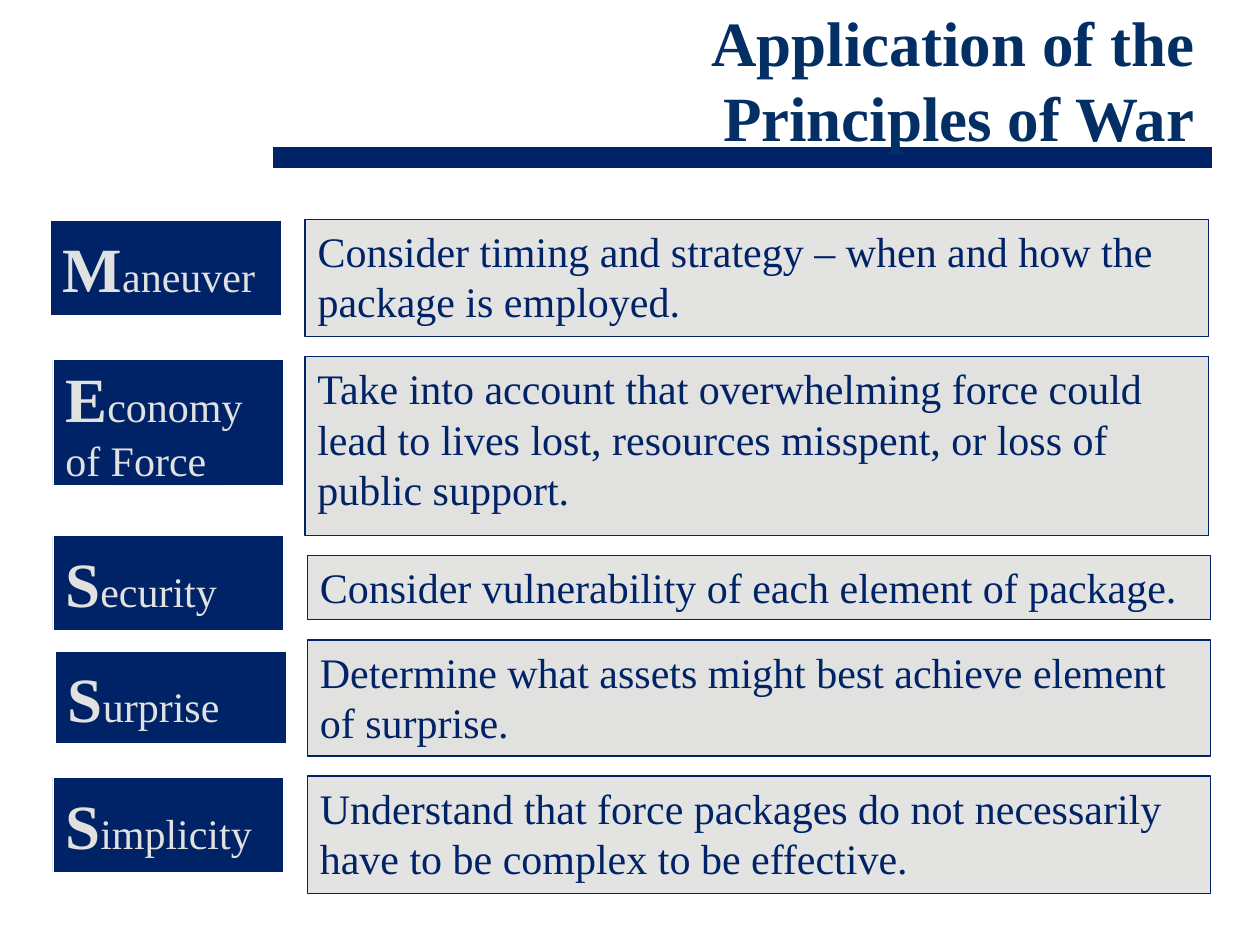
from lxml import etree
from pptx import Presentation
from pptx.dml.color import RGBColor
from pptx.enum import shapes, text
from pptx.oxml import ns
from pptx.util import Inches, Pt

NAVY = RGBColor(0x00, 0x23, 0x68)
TITLE_BLUE = RGBColor(0x03, 0x2F, 0x65)
LIGHT_GRAY = RGBColor(0xE1, 0xE1, 0xDF)
MID_GRAY = RGBColor(0xC8, 0xC8, 0xC6)
WHITE = RGBColor(0xFF, 0xFF, 0xFF)
FONT = "Times New Roman"

PRINCIPLES = [
    ("Maneuver", (0.4, 1.75, 0.75),
     "Consider timing and strategy – when and how the package is employed.",
     (2.42, 1.74, 0.93)),
    ("Economy of Force", (0.42, 2.85, 1),
     "Take into account that overwhelming force could lead to lives lost, "
     "resources misspent, or loss of public support.",
     (2.42, 2.83, 1.42)),
    ("Security", (0.42, 4.25, 0.75),
     "Consider vulnerability of each element of package.",
     (2.44, 4.41, 0.51)),
    ("Surprise", (0.44, 5.17, 0.73),
     "Determine what assets might best achieve element of surprise.",
     (2.44, 5.08, 0.92)),
    ("Simplicity", (0.42, 6.17, 0.75),
     "Understand that force packages do not necessarily have to be complex "
     "to be effective.",
     (2.44, 6.16, 0.93)),
]


def add_text(paragraph, content, size=24, color=NAVY, bold=False):
    run = paragraph.add_run()
    run.text = content
    run.font.name = FONT
    run.font.size = Pt(size)
    run.font.bold = bold
    run.font.color.rgb = color


class PrinciplesSlide:
    label_width = 1.83
    detail_width = 7.17

    def __init__(self, presentation):
        self.slide = presentation.slides.add_slide(presentation.slide_layouts[1])

    def place(self, shape, left, top, width, height):
        shape.left, shape.top = Inches(left), Inches(top)
        shape.width, shape.height = Inches(width), Inches(height)

    def prepare(self, shape, anchor, alignment):
        frame = shape.text_frame
        frame.word_wrap = True
        frame.auto_size = text.MSO_AUTO_SIZE.NONE
        frame.vertical_anchor = anchor
        paragraph = frame.paragraphs[0]
        paragraph.alignment = alignment
        paragraph.space_before = Pt(0)
        return paragraph

    def rule(self, left, right, top):
        line = self.slide.shapes.add_connector(
            shapes.MSO_CONNECTOR.STRAIGHT,
            Inches(left), Inches(top), Inches(right), Inches(top))
        line.line.color.rgb = NAVY
        line.line.width = Pt(12.25)
        properties = line._element.spPr
        etree.SubElement(properties, ns.qn("a:effectLst"))
        self.slide.shapes._spTree.insert(2, line._element)

    def title(self, content):
        title = self.slide.shapes.title
        self.place(title, 0.58, 0, 9, 1.25)
        paragraph = self.prepare(title, text.MSO_ANCHOR.MIDDLE, text.PP_ALIGN.RIGHT)
        add_text(paragraph, content[0], 36, TITLE_BLUE, True)
        paragraph.add_line_break()
        add_text(paragraph, content[1], 36, TITLE_BLUE, True)

    def box(self, shape, position, width, fill, line, line_width):
        left, top, height = position
        self.place(shape, left, top, width, height)
        shape.fill.solid()
        shape.fill.fore_color.rgb = fill
        shape.line.color.rgb = line
        shape.line.width = Pt(line_width)

    def rectangle(self):
        shape = self.slide.shapes.add_shape(
            shapes.MSO_SHAPE.RECTANGLE, 0, 0, Inches(1), Inches(1))
        shape.shadow.inherit = False
        return shape

    def label(self, name, position):
        shape = self.rectangle()
        self.box(shape, position, self.label_width, NAVY, WHITE, 0.25)
        paragraph = self.prepare(shape, text.MSO_ANCHOR.MIDDLE, text.PP_ALIGN.LEFT)
        add_text(paragraph, name[0], 36, LIGHT_GRAY, True)
        add_text(paragraph, name[1:], 24, LIGHT_GRAY)

    def detail(self, content, position, translucent, placeholder=None):
        shape = placeholder or self.rectangle()
        fill = MID_GRAY if translucent else LIGHT_GRAY
        self.box(shape, position, self.detail_width, fill, NAVY, 0.75)
        if translucent:
            color = shape._element.spPr.find(".//" + ns.qn("a:srgbClr"))
            etree.SubElement(color, ns.qn("a:alpha"), val="50000")
        paragraph = self.prepare(shape, text.MSO_ANCHOR.TOP, text.PP_ALIGN.LEFT)
        if placeholder:
            properties = paragraph._p.get_or_add_pPr()
            properties.set("marL", "0")
            properties.set("indent", "0")
            etree.SubElement(properties, ns.qn("a:buNone"))
        add_text(paragraph, content)


def main():
    presentation = Presentation()
    presentation.slide_width = Inches(10)
    presentation.slide_height = Inches(7.5)
    page = PrinciplesSlide(presentation)
    page.rule(2.17, 9.62, 1.25)
    page.title(("Application of the", "Principles of War"))
    body = page.slide.placeholders[1]
    for index, (name, label_position, content, detail_position) in enumerate(PRINCIPLES):
        page.detail(content, detail_position, index % 2 == 0, body if index == 0 else None)
        page.label(name, label_position)
    presentation.save("out.pptx")


if __name__ == "__main__":
    main()
